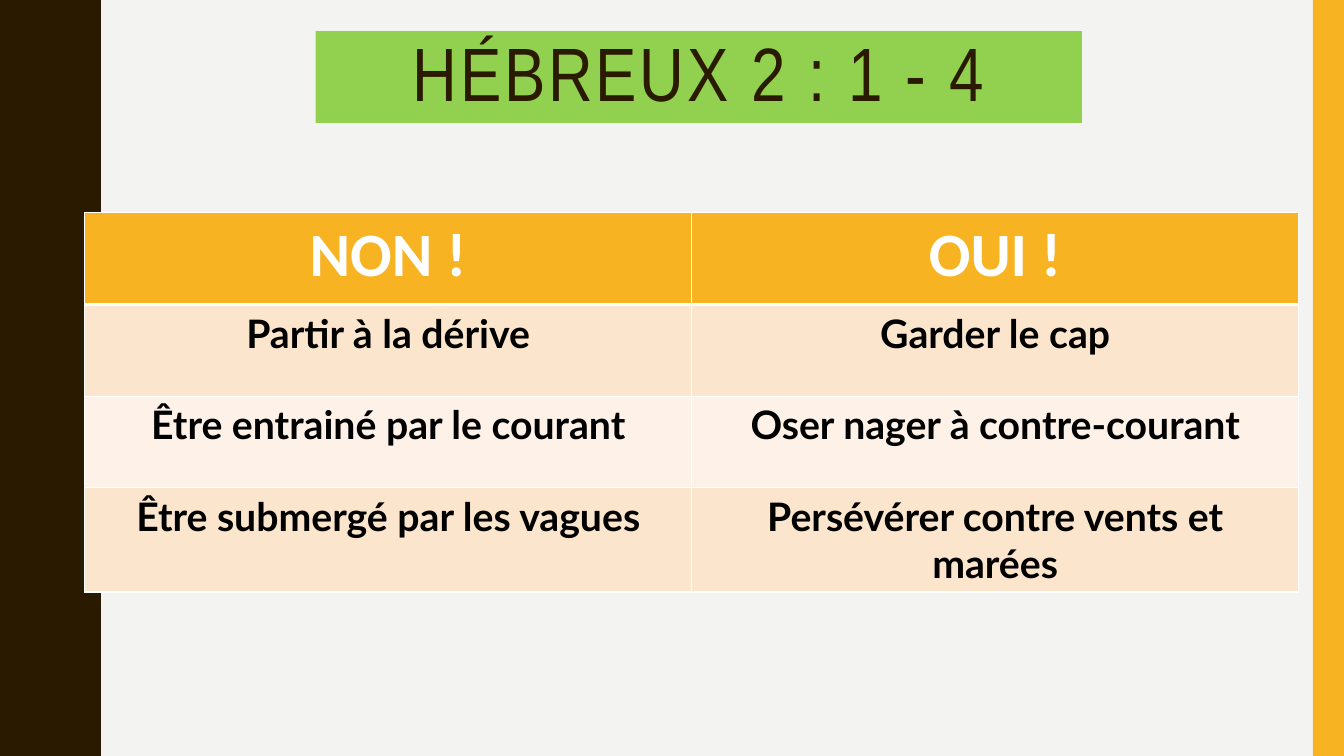
from lxml.etree import SubElement
from pptx import Presentation
from pptx.dml.color import RGBColor
from pptx.enum.shapes import MSO_SHAPE
from pptx.enum.text import MSO_ANCHOR, PP_ALIGN
from pptx.oxml.ns import qn
from pptx.util import Inches, Pt

COLORS = {
    "background": "F3F3F2", "brown": "2A1A00", "amber": "F8B323",
    "green": "92D050", "peach": "FCE5CD", "cream": "FEF2E8",
    "white": "FFFFFF", "black": "000000",
}
SLIDE_WIDTH, SLIDE_HEIGHT = 13.33, 7.5

# Half of one wave on the brown edge: the other half mirrors it
WAVE_PERIOD = 1.5
HALF_WAVE = [
    (0.78, 0), (0.78, 0.07), (0.79, 0.14), (0.8, 0.2), (0.81, 0.25),
    (0.83, 0.29), (0.85, 0.33), (0.87, 0.38), (0.89, 0.42), (0.91, 0.46),
    (0.93, 0.5), (0.95, 0.55), (0.96, 0.61), (0.97, 0.68), (0.97, 0.75),
]

ROWS = [
    ("NON !", "OUI !"),
    ("Partir à la dérive", "Garder le cap"),
    ("Être entrainé par le courant", "Oser nager à contre-courant"),
    ("Être submergé par les vagues", "Persévérer contre vents et marées"),
]


def color(name):
    return RGBColor.from_string(COLORS[name])


def write_text(frame, text, font, size, ink, bold=False, tracking=None, line_spacing=None):
    paragraph = frame.paragraphs[0]
    paragraph.alignment = PP_ALIGN.CENTER
    if line_spacing:
        paragraph.line_spacing = line_spacing
    run = paragraph.add_run()
    run.text = text
    run.font.name = font
    run.font.size = Pt(size)
    run.font.bold = bold
    run.font.color.rgb = color(ink)
    if tracking:
        run.font._element.set("spc", str(tracking * 100))


def set_borders(cell, widths):
    properties = cell._tc.get_or_add_tcPr()
    for position, (side, width) in enumerate(widths.items()):
        line = SubElement(properties, qn(f"a:{side}"), w=str(Pt(width)))
        fill = SubElement(line, qn("a:solidFill"))
        SubElement(fill, qn("a:srgbClr"), val=COLORS["white"])
        properties.insert(position, line)


class SlideBuilder:
    def __init__(self, presentation):
        self.slide = presentation.slides.add_slide(presentation.slide_layouts[5])
        self.heading_font = "Arial Narrow"
        self.header_font = "Calibri"
        self.body_font = "Lato"

    def background(self, fill):
        self.slide.background.fill.solid()
        self.slide.background.fill.fore_color.rgb = color(fill)

    def paint(self, shape, fill):
        shape.shadow.inherit = False
        shape.fill.solid()
        shape.fill.fore_color.rgb = color(fill)
        shape.line.fill.background()

    def wavy_edge(self, fill):
        wave = HALF_WAVE + [(x, WAVE_PERIOD - y) for x, y in HALF_WAVE[-2::-1]]
        points = [
            (x, y + WAVE_PERIOD * period)
            for period in range(round(SLIDE_HEIGHT / WAVE_PERIOD))
            for x, y in wave
        ]
        builder = self.slide.shapes.build_freeform(0, 0, scale=Inches(1))
        builder.add_line_segments(points + [(0, SLIDE_HEIGHT)], close=True)
        self.paint(builder.convert_to_shape(), fill)

    def band(self, left, top, width, height, fill):
        shape = self.slide.shapes.add_shape(
            MSO_SHAPE.RECTANGLE, Inches(left), Inches(top), Inches(width), Inches(height))
        self.paint(shape, fill)

    def title(self, text, left, top, width, height, fill):
        title = self.slide.shapes.title
        title.left, title.top = Inches(left), Inches(top)
        title.width, title.height = Inches(width), Inches(height)
        title.fill.solid()
        title.fill.fore_color.rgb = color(fill)
        title.text_frame.vertical_anchor = MSO_ANCHOR.MIDDLE
        write_text(title.text_frame, text, self.heading_font, 54, "brown",
                   tracking=2, line_spacing=0.9)

    def table(self, rows, left, top, column_width, row_height):
        columns = len(rows[0])
        table = self.slide.shapes.add_table(
            len(rows), columns, Inches(left), Inches(top),
            Inches(column_width * columns), Inches(row_height * len(rows))).table
        for row_index, texts in enumerate(rows):
            table.rows[row_index].height = Inches(row_height)
            header = row_index == 0
            fill = "amber" if header else ("cream", "peach")[row_index % 2]
            for column_index, text in enumerate(texts):
                cell = table.cell(row_index, column_index)
                cell.fill.solid()
                cell.fill.fore_color.rgb = color(fill)
                set_borders(cell, {"lnL": 1, "lnR": 1,
                                   "lnT": 3 if row_index == 1 else 1,
                                   "lnB": 3 if header else 1})
                if header:
                    write_text(cell.text_frame, text, self.header_font, 44, "white", bold=True)
                else:
                    write_text(cell.text_frame, text, self.body_font, 28, "black", bold=True)


def main():
    presentation = Presentation()
    presentation.slide_width = Inches(SLIDE_WIDTH)
    presentation.slide_height = Inches(SLIDE_HEIGHT)
    builder = SlideBuilder(presentation)

    # Decor
    builder.background("background")
    builder.wavy_edge("brown")
    builder.band(13.02, 0, 0.31, SLIDE_HEIGHT, "amber")

    # Content
    builder.title("HÉBREUX 2 : 1 - 4", 3.13, 0.31, 7.6, 0.91, "green")
    builder.table(ROWS, 0.84, 2.11, 6.02, 0.91)

    presentation.save("out.pptx")


if __name__ == "__main__":
    main()
